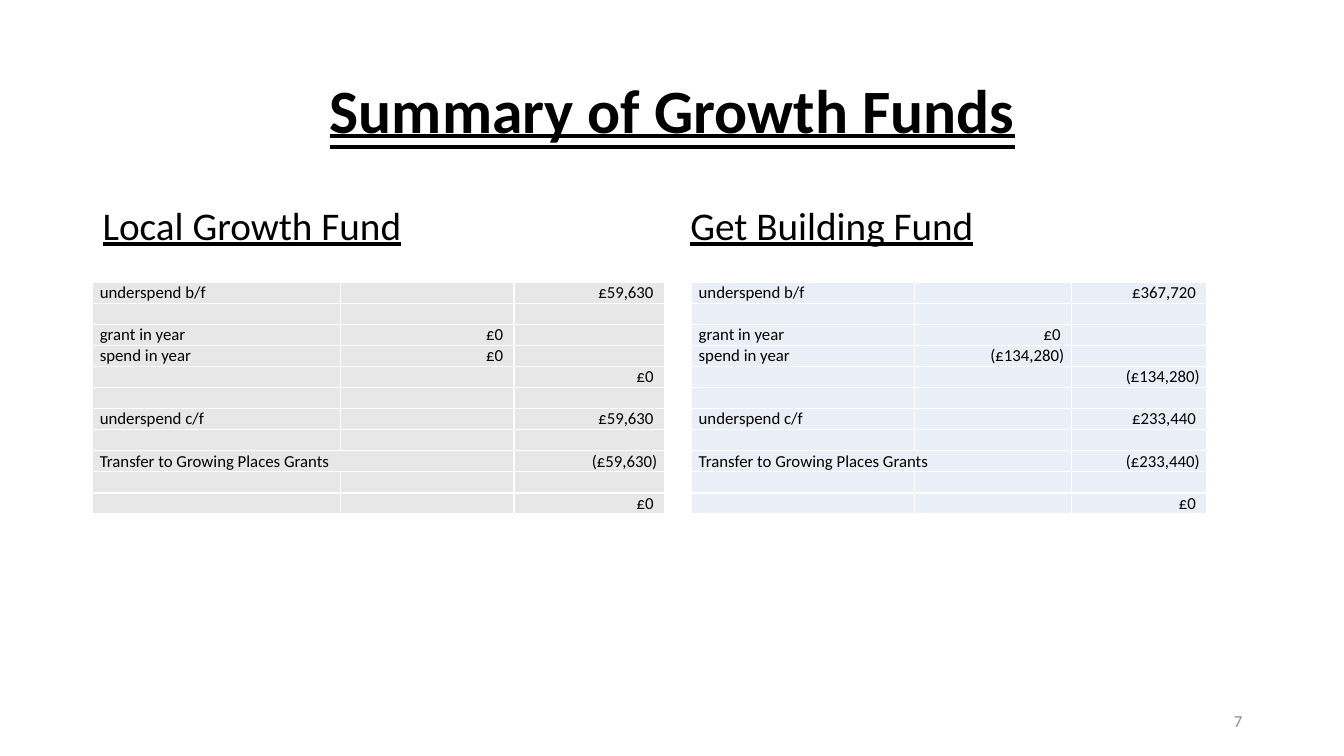
from lxml.etree import SubElement
from pptx import Presentation
from pptx.dml.color import RGBColor
from pptx.enum.text import MSO_ANCHOR as Anchor, MSO_UNDERLINE as Underline, PP_ALIGN as Align
from pptx.oxml.ns import qn
from pptx.util import Inches, Pt


def write(frame, text, size, color="000000", align=Align.LEFT, bold=False,
          underline=False, spacing=None, before=None):
    paragraph = frame.paragraphs[0]
    paragraph.alignment = align
    paragraph.line_spacing = spacing
    paragraph.space_before = before
    if not text:
        # An empty line keeps its height through its end mark
        SubElement(paragraph._p, qn("a:endParaRPr"), sz=str(size * 100))
        return
    run = paragraph.add_run()
    run.text = text
    run.font.name = "Calibri"
    run.font.size = Pt(size)
    run.font.bold = bold
    run.font.underline = underline
    run.font.color.rgb = RGBColor.from_string(color)


def add_text(left, top, width, height, text, anchor=Anchor.TOP, **text_format):
    frame = slide.shapes.add_textbox(
        Inches(left), Inches(top), Inches(width), Inches(height)).text_frame
    frame.word_wrap = True
    frame.vertical_anchor = anchor
    write(frame, text, **text_format)


deck = Presentation()
deck.slide_width, deck.slide_height = Inches(13.33), Inches(7.5)
slide = deck.slides.add_slide(deck.slide_layouts[6])

MARGIN, HALF = 0.92, 5.67
TABLE_TOP, TABLE_HEIGHT = 2.8, 2.3
COLUMN_SHARES = (0.433, 0.304, 0.263)
TRANSFER = "Transfer to Growing Places Grants"

add_text(MARGIN, 0.4, 11.5, 1.45, "Summary of Growth Funds", Anchor.MIDDLE, size=44,
         align=Align.CENTER, bold=True, underline=Underline.DOUBLE_LINE, spacing=0.9)
add_text(9.42, 6.95, 3, 0.4, "7", Anchor.MIDDLE, size=12, color="8C8C8C", align=Align.RIGHT)

# name, heading left, table left, table width, fill, brought forward, spend,
# net change, carried forward, transfer out
funds = [
    ("Local Growth Fund", MARGIN, MARGIN, HALF, "E7E7E7",
     "£59,630 ", "£0 ", "£0 ", "£59,630 ", "(£59,630)"),
    ("Get Building Fund", 6.75, 6.86, 5.11, "EAEFF7",
     "£367,720 ", "(£134,280)", "(£134,280)", "£233,440 ", "(£233,440)"),
]

for name, heading_left, left, width, fill, opening, spend, net, closing, transfer in funds:
    add_text(heading_left, 2, HALF, 0.55, name, size=28, underline=True,
             spacing=0.9, before=Pt(10))
    blank = ("", "", "")
    entries = [
        ("underspend b/f", "", opening),
        blank,
        ("grant in year", "£0 ", ""),
        ("spend in year", spend, ""),
        ("", "", net),
        blank,
        ("underspend c/f", "", closing),
        blank,
        (TRANSFER, "", transfer),
        blank,
        ("", "", "£0 "),
    ]
    ledger = slide.shapes.add_table(
        len(entries), len(COLUMN_SHARES), Inches(left), Inches(TABLE_TOP),
        Inches(width), Inches(TABLE_HEIGHT)).table
    ledger.first_row = ledger.horz_banding = False
    for column, share in zip(ledger.columns, COLUMN_SHARES):
        column.width = Inches(width * share)

    for r, entry in enumerate(entries):
        ledger.rows[r].height = Inches(TABLE_HEIGHT / len(entries))
        for c, text in enumerate(entry):
            cell = ledger.cell(r, c)
            cell.margin_left = cell.margin_right = Inches(0.07)
            cell.margin_top = cell.margin_bottom = 0
            cell.vertical_anchor = Anchor.MIDDLE
            for side in ("lnL", "lnR", "lnT", "lnB"):
                border = SubElement(cell._tc.get_or_add_tcPr(), qn(f"a:{side}"), w=str(Pt(1)))
                SubElement(SubElement(border, qn("a:solidFill")), qn("a:srgbClr"), val="FFFFFF")
            cell.fill.solid()
            cell.fill.fore_color.rgb = RGBColor.from_string(fill)
            write(cell.text_frame, text, size=12, align=Align.RIGHT if c else Align.LEFT)
        if entry[0] == TRANSFER:
            ledger.cell(r, 0).merge(ledger.cell(r, 1))
            ledger.cell(r, 2).vertical_anchor = Anchor.BOTTOM

deck.save("out.pptx")
